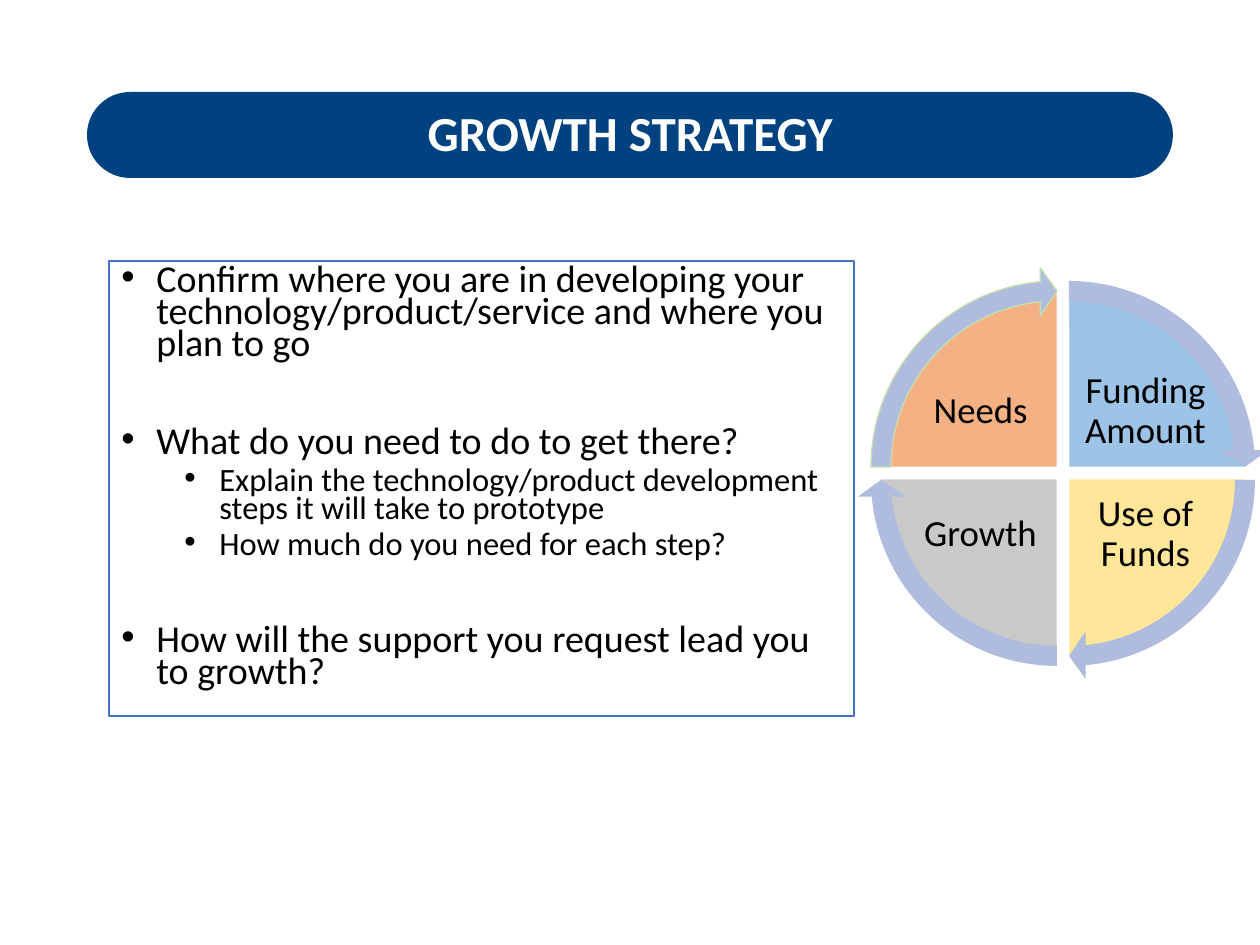
from lxml.etree import SubElement
from pptx import Presentation
from pptx.dml.color import RGBColor
from pptx.enum.shapes import MSO_SHAPE as Kind
from pptx.enum.text import MSO_ANCHOR as Anchor, PP_ALIGN as Align
from pptx.oxml.ns import qn
from pptx.util import Pt

FONT = "Calibri"
BLACK = RGBColor(0x00, 0x00, 0x00)
WHITE = RGBColor(0xFF, 0xFF, 0xFF)
NAVY = RGBColor(0x00, 0x42, 0x80)
BLUE = RGBColor(0x44, 0x72, 0xC4)
LILAC = RGBColor(0xB0, 0xBC, 0xDE)
LIME = RGBColor(0xC5, 0xDF, 0xAF)

TITLE = "GROWTH STRATEGY"
# level, space before in points, text
POINTS = [
    (0, 0, "Confirm where you are in developing your "
           "technology/product/service and where you plan to go"),
    (0, 38, "What do you need to do to get there?"),
    (1, 5, "Explain the technology/product development "
           "steps it will take to prototype"),
    (1, 5, "How much do you need for each step?"),
    (0, 38, "How will the support you request lead you to growth?"),
]
# per level: text size, left indent in px
LEVELS = [(21.7, 35), (18.6, 98)]
HANG = 35

# clockwise from the top right: label, fill, column, row, arrow outline
PARTS = [
    ("Funding Amount", RGBColor(0x9D, 0xC3, 0xE6), 1, 0, None),
    ("Use of Funds", RGBColor(0xFF, 0xE6, 0x99), 1, 1, None),
    ("Growth", RGBColor(0xC9, 0xC9, 0xC9), 0, 1, None),
    ("Needs", RGBColor(0xF4, 0xB1, 0x83), 0, 0, LIME),
]
# size, then the left for each column and the top for each row
PIE, PIE_X, PIE_Y = 355, (880, 891), (290, 301)
RING, RING_X, RING_Y = 400, (857, 869), (267, 280)
LABEL_W, LABEL_H, LABEL_X, LABEL_Y = 131, 97, (915, 1080), (363, 486)
QUARTER, FULL = 54, 216  # angles, in the unit of adjustments

SCALE = 914400 / 126


def px(n):
    return round(n * SCALE)


def box(n):
    return [px(v) for v in n]


def draw(kind, at, fill=None, line=None, width=0.75, adj=()):
    shape = slide.shapes.add_shape(kind, *box(at))
    shape.shadow.inherit = False
    for i, v in enumerate(adj):
        shape.adjustments[i] = v
    if fill is None:
        shape.fill.background()
    else:
        shape.fill.solid()
        shape.fill.fore_color.rgb = fill
    if line is None:
        shape.line.fill.background()
    else:
        shape.line.color.rgb = line
        shape.line.width = Pt(width)
    return shape


def write(par, text, size, color=BLACK, bold=False):
    run = par.add_run()
    run.text = text
    font = run.font
    font.name, font.size, font.bold = FONT, Pt(size), bold
    font.color.rgb = color


def bullet(par, left):
    props = par._p.get_or_add_pPr()
    props.set("marL", str(px(left)))
    props.set("indent", str(-px(HANG)))
    SubElement(props, qn("a:buFont"), typeface="Arial")
    SubElement(props, qn("a:buChar"), char="•")


def add_title():
    at = (87, 92, 1086, 86)
    draw(Kind.ROUNDED_RECTANGLE, at, NAVY, adj=[0.5])
    title = slide.shapes.title
    title.left, title.top, title.width, title.height = box((87, 88, 1086, 96))
    slide.shapes._spTree.append(title._element)  # in front of the pill
    frame = title.text_frame
    frame.vertical_anchor = Anchor.MIDDLE
    par = frame.paragraphs[0]
    par.alignment, par.line_spacing = Align.CENTER, 0.9
    write(par, TITLE, 28, WHITE, True)


def add_points():
    frame = draw(Kind.RECTANGLE, (109, 261, 745, 455), line=BLUE).text_frame
    frame.word_wrap = True
    frame.vertical_anchor = Anchor.TOP
    for i, (level, gap, text) in enumerate(POINTS):
        par = frame.add_paragraph() if i else frame.paragraphs[0]
        size, left = LEVELS[level]
        par.level = level
        par.alignment, par.line_spacing = Align.LEFT, 0.7
        par.space_before = Pt(gap)
        bullet(par, left)
        write(par, text, size)


def add_label(text, col, row):
    at = (LABEL_X[col], LABEL_Y[row], LABEL_W, LABEL_H)
    frame = slide.shapes.add_textbox(*box(at)).text_frame
    frame.word_wrap = True
    frame.vertical_anchor = Anchor.MIDDLE
    frame.margin_left = frame.margin_right = px(4)
    frame.margin_top = frame.margin_bottom = px(4)
    par = frame.paragraphs[0]
    par.alignment, par.line_spacing = Align.CENTER, 0.9
    write(par, text, 21)


def add_cycle():
    for i, (text, fill, col, row, _) in enumerate(PARTS):
        start = (i - 1) * QUARTER % FULL
        at = (PIE_X[col], PIE_Y[row], PIE, PIE)
        draw(Kind.PIE, at, fill, WHITE, 1, [start, (start + QUARTER) % FULL])
        add_label(text, col, row)
    for i, (_, _, col, row, line) in enumerate(PARTS):
        start = (i - 1) * QUARTER % FULL
        end = (start + QUARTER - 3.275) % FULL
        at = (RING_X[col], RING_Y[row], RING, RING)
        draw(Kind.CIRCULAR_ARROW, at, LILAC, line,
             adj=[0.05, 3.275, end, start, 0.06])


deck = Presentation()
deck.slide_width, deck.slide_height = px(1260), px(945)
slide = deck.slides.add_slide(deck.slide_layouts[5])
add_title()
add_points()
add_cycle()
deck.save("out.pptx")
